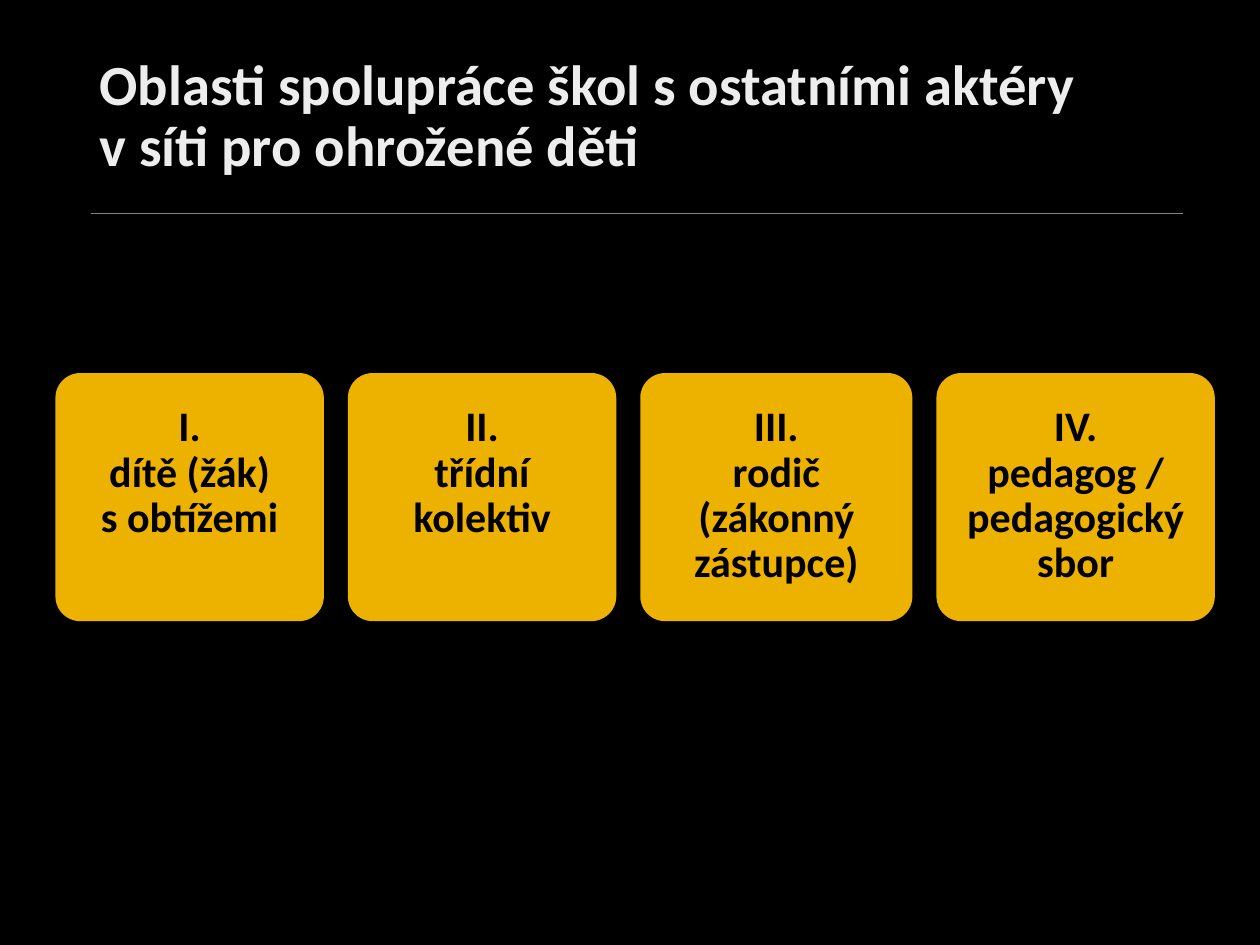
from lxml.etree import SubElement
from pptx import Presentation
from pptx.dml.color import RGBColor
from pptx.enum.shapes import MSO_CONNECTOR, MSO_SHAPE
from pptx.enum.text import MSO_ANCHOR, MSO_AUTO_SIZE, PP_ALIGN
from pptx.oxml.ns import qn
from pptx.util import Pt

BLACK = RGBColor(0x00, 0x00, 0x00)
TITLE_COLOR = RGBColor(0xED, 0xED, 0xED)
RULE_COLOR = RGBColor(0x80, 0x80, 0x80)
AMBER = RGBColor(0xFF, 0xC0, 0x00)
FONT = "Calibri"

CARDS_LEFT, CARDS_TOP, CARD_HEIGHT, CARD_GAP = 31.7, 213.2, 141.8, 13.7
# Width and lines of each card
CARDS = [
    (153.4, ["I.", "dítě (žák)", "s obtížemi"]),
    (153.4, ["II.", "třídní kolektiv"]),
    (155.5, ["III.", "rodič (zákonný zástupce)"]),
    (159.1, ["IV.", "pedagog / pedagogický sbor"]),
]


def format_text(text_frame, size, color, alignment):
    for paragraph in text_frame.paragraphs:
        paragraph.alignment = alignment
        paragraph.line_spacing = 0.9
        paragraph.space_before = Pt(0)
        paragraph.space_after = Pt(0)
        for run in paragraph.runs:
            run.font.name = FONT
            run.font.size = Pt(size)
            run.font.bold = True
            run.font.color.rgb = color


def set_title(slide, text):
    title = slide.shapes.title
    title.left, title.top, title.width, title.height = Pt(49.7), Pt(28.8), Pt(626.4), Pt(104.4)
    text_frame = title.text_frame
    text_frame.text = text
    text_frame.word_wrap = True
    text_frame.auto_size = MSO_AUTO_SIZE.NONE
    text_frame.vertical_anchor = MSO_ANCHOR.TOP
    format_text(text_frame, 32.4, TITLE_COLOR, PP_ALIGN.LEFT)


def add_rule(slide, left, right, top):
    rule = slide.shapes.add_connector(
        MSO_CONNECTOR.STRAIGHT, Pt(left), Pt(top), Pt(right), Pt(top))
    rule.line.color.rgb = RULE_COLOR
    rule.line.width = Pt(0.5)
    SubElement(rule._element.spPr, qn("a:effectLst"))


def add_card(slide, left, width, lines):
    card = slide.shapes.add_shape(
        MSO_SHAPE.ROUNDED_RECTANGLE, Pt(left), Pt(CARDS_TOP), Pt(width), Pt(CARD_HEIGHT))
    card.adjustments[0] = 0.1
    card.shadow.inherit = False
    card.line.fill.background()
    card.fill.solid()
    card.fill.fore_color.rgb = AMBER
    # Slightly transparent fill
    color = card._element.spPr.find(qn("a:solidFill")).find(qn("a:srgbClr"))
    SubElement(color, qn("a:alpha"), val="93000")

    text_frame = card.text_frame
    text_frame.word_wrap = True
    text_frame.vertical_anchor = MSO_ANCHOR.TOP
    text_frame.margin_left = text_frame.margin_right = Pt(3.6)
    text_frame.margin_top, text_frame.margin_bottom = Pt(14.4), Pt(2.2)
    text_frame.text = "\n".join(lines)
    format_text(text_frame, 24, BLACK, PP_ALIGN.CENTER)


def main():
    presentation = Presentation()
    presentation.slide_width, presentation.slide_height = Pt(720), Pt(540)
    slide = presentation.slides.add_slide(presentation.slide_layouts[5])
    slide.background.fill.solid()
    slide.background.fill.fore_color.rgb = BLACK

    # Heading with a thin rule below
    set_title(slide, "Oblasti spolupráce škol s ostatními aktéry\vv síti pro ohrožené děti")
    add_rule(slide, 51.8, 676.1, 121.7)

    # Row of cards, equal gaps
    left = CARDS_LEFT
    for width, lines in CARDS:
        add_card(slide, left, width, lines)
        left += width + CARD_GAP

    presentation.save("out.pptx")


if __name__ == "__main__":
    main()
